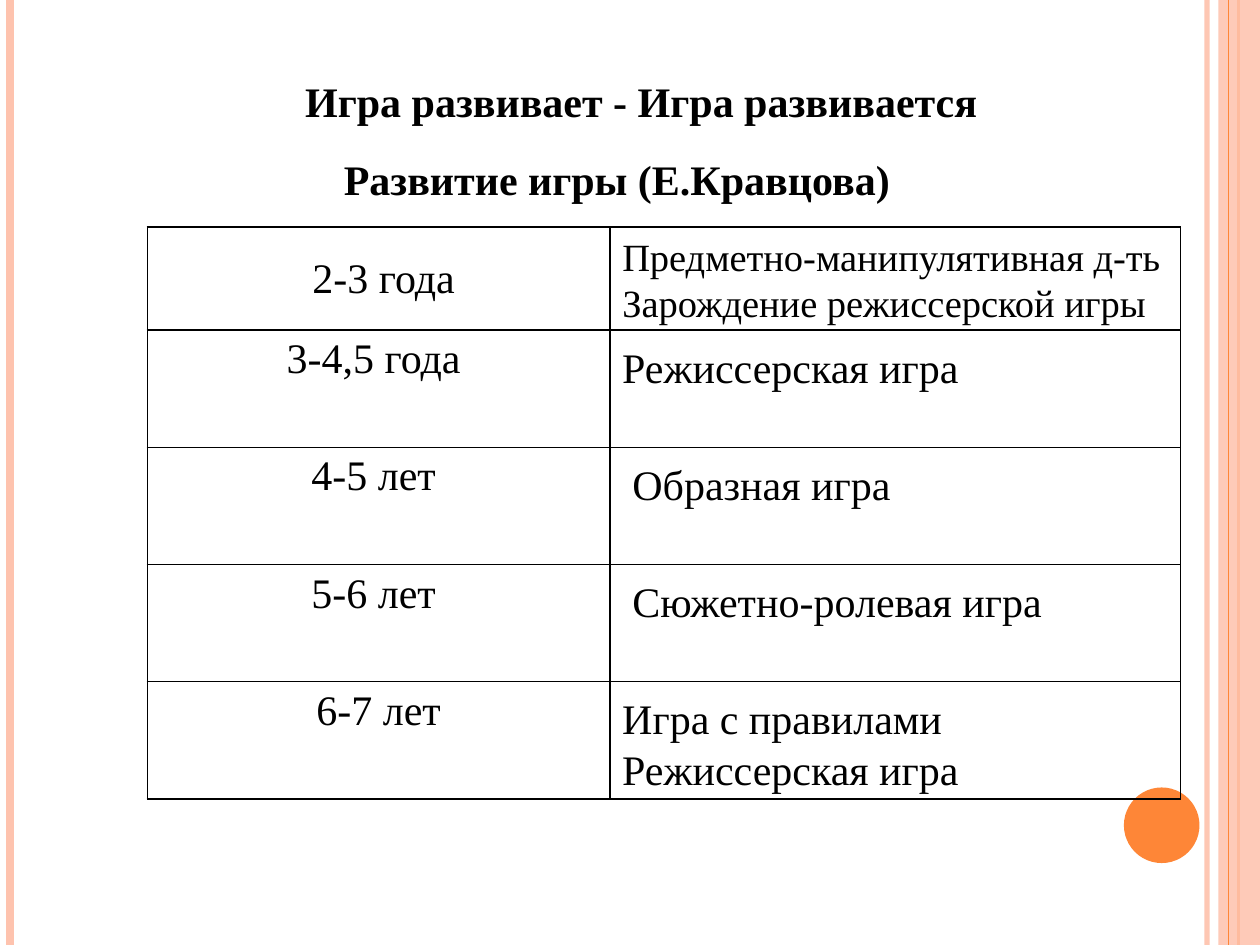
"""Builds a slide on how children's play develops with age."""
from lxml import etree
from pptx import Presentation
from pptx import util as u
from pptx.dml.color import RGBColor
from pptx.enum import shapes, text
from pptx.oxml.ns import qn

BLACK = RGBColor(0x00, 0x00, 0x00)
ORANGE = RGBColor(0xFE, 0x86, 0x37)
PEACH = RGBColor(0xFE, 0xC3, 0xAE)
FONT = "Times New Roman"
HEADING = "Игра развивает - Игра развивается"
SUBHEADING = "Развитие игры (Е.Кравцова)"
AGES = ["", "3-4,5 года", "4-5 лет", "5-6 лет", "6-7 лет"]
AGE_MARGINS = [0.1, 0.18, 0.18, 0.18, 0.1]
COLS = [3.67, 4.53]
ROWS = [0.82] + [0.93] * 4
TABLE_LEFT, TABLE_TOP = 1.17, 1.8
STAGES = [
    (4.84, ["Режиссерская игра"]),
    (4.92, ["Образная игра"]),
    (4.92, ["Сюжетно-ролевая игра"]),
    (4.84, ["Игра с правилами", "Режиссерская игра"]),
]
FIRST_STAGE = ["Предметно-манипулятивная д-ть", "Зарождение режиссерской игры"]
STRIPES = [(9.58, PEACH, 3, 93), (0.08, PEACH, 4.5, 100), (9.83, ORANGE, 1.5, 100)]
THIN_STRIPE = (9.75, ORANGE, 0.75, 100)


def set_alpha(parent, percent):
    color = next(parent.iter(qn("a:srgbClr")))
    etree.SubElement(color, qn("a:alpha")).set("val", str(percent * 1000))


def add_stripe(s, x, color, width, alpha):
    sp = s.shapes.add_connector(shapes.MSO_CONNECTOR.STRAIGHT, u.Inches(x), 0, u.Inches(x), u.Inches(7.5))
    sp.line.color.rgb = color
    sp.line.width = u.Pt(width)
    if alpha < 100:
        set_alpha(sp.line._ln, alpha)
    etree.SubElement(sp._element.spPr, qn("a:effectLst"))


def add_filled(s, kind, box, color):
    sp = s.shapes.add_shape(kind, *map(u.Inches, box))
    sp.shadow.inherit = False
    sp.fill.solid()
    sp.fill.fore_color.rgb = color
    sp.line.fill.background()
    return sp


def write(tf, lines, size=24, bold=False, align=text.PP_ALIGN.LEFT):
    for i, line in enumerate(lines):
        p = tf.paragraphs[0] if i == 0 else tf.add_paragraph()
        p.alignment = align
        r = p.add_run()
        r.text = line
        for name, value in {"name": FONT, "size": u.Pt(size), "bold": bold}.items():
            setattr(r.font, name, value)
        r.font.color.rgb = BLACK


def add_text(s, box, lines, left_margin=0.1, **style):
    tf = s.shapes.add_textbox(*map(u.Inches, box)).text_frame
    tf.word_wrap = True
    tf.margin_left = u.Inches(left_margin)
    write(tf, lines, **style)


def set_borders(cell):
    tc_pr = cell._tc.get_or_add_tcPr()
    for i, side in enumerate(("lnL", "lnR", "lnT", "lnB")):
        ln = etree.Element(qn(f"a:{side}"), w=str(u.Pt(1)))
        fill = etree.SubElement(ln, qn("a:solidFill"))
        etree.SubElement(fill, qn("a:srgbClr")).set("val", str(BLACK))
        tc_pr.insert(i, ln)


def add_age_table(s):
    box = (TABLE_LEFT, TABLE_TOP, sum(COLS), sum(ROWS))
    table = s.shapes.add_table(len(ROWS), len(COLS), *map(u.Inches, box)).table
    table.first_row = table.horz_banding = False
    for column, width in zip(table.columns, COLS):
        column.width = u.Inches(width)
    for row, height, age, margin in zip(table.rows, ROWS, AGES, AGE_MARGINS):
        row.height = u.Inches(height)
        for cell in row.cells:
            cell.fill.background()
            set_borders(cell)
        if age:
            row.cells[0].margin_right = u.Inches(margin)
            write(row.cells[0].text_frame, [age], align=text.PP_ALIGN.CENTER)


def main():
    prs = Presentation()
    prs.slide_width, prs.slide_height = u.Inches(10), u.Inches(7.5)
    s = prs.slides.add_slide(prs.slide_layouts[5])
    for stripe in STRIPES:
        add_stripe(s, *stripe)
    band = add_filled(s, shapes.MSO_SHAPE.RECTANGLE, (9.67, 0, 0.33, 7.5), PEACH)
    set_alpha(band._element.spPr, 87)
    add_stripe(s, *THIN_STRIPE)
    add_filled(s, shapes.MSO_SHAPE.OVAL, (8.92, 6.25, 0.6, 0.6), ORANGE)

    title = s.shapes.title
    for name, value in {"left": 0.31, "top": 0.55, "width": 9.06, "height": 1.02}.items():
        setattr(title, name, u.Inches(value))
    tf = title.text_frame
    tf.auto_size = text.MSO_AUTO_SIZE.NONE
    tf.vertical_anchor = text.MSO_ANCHOR.TOP
    tf.margin_left = u.Inches(0.6)
    centred = {"align": text.PP_ALIGN.CENTER}
    write(tf, [HEADING], bold=True, **centred)
    add_text(s, (0.47, 1.17, 8.52, 0.5), [SUBHEADING], left_margin=0.43, bold=True, **centred)

    add_age_table(s)
    for i, (left, lines) in enumerate(STAGES):
        top = TABLE_TOP + sum(ROWS[:i + 1]) + 0.04
        add_text(s, (left, top, 8.51 - left, 0.91), lines)
    add_text(s, (1.56, 1.95, 2.97, 0.5), ["2-3 года"], **centred)
    add_text(s, (4.84, TABLE_TOP, 4.69, 0.84), FIRST_STAGE, size=22)
    prs.save("out.pptx")


if __name__ == "__main__":
    main()
